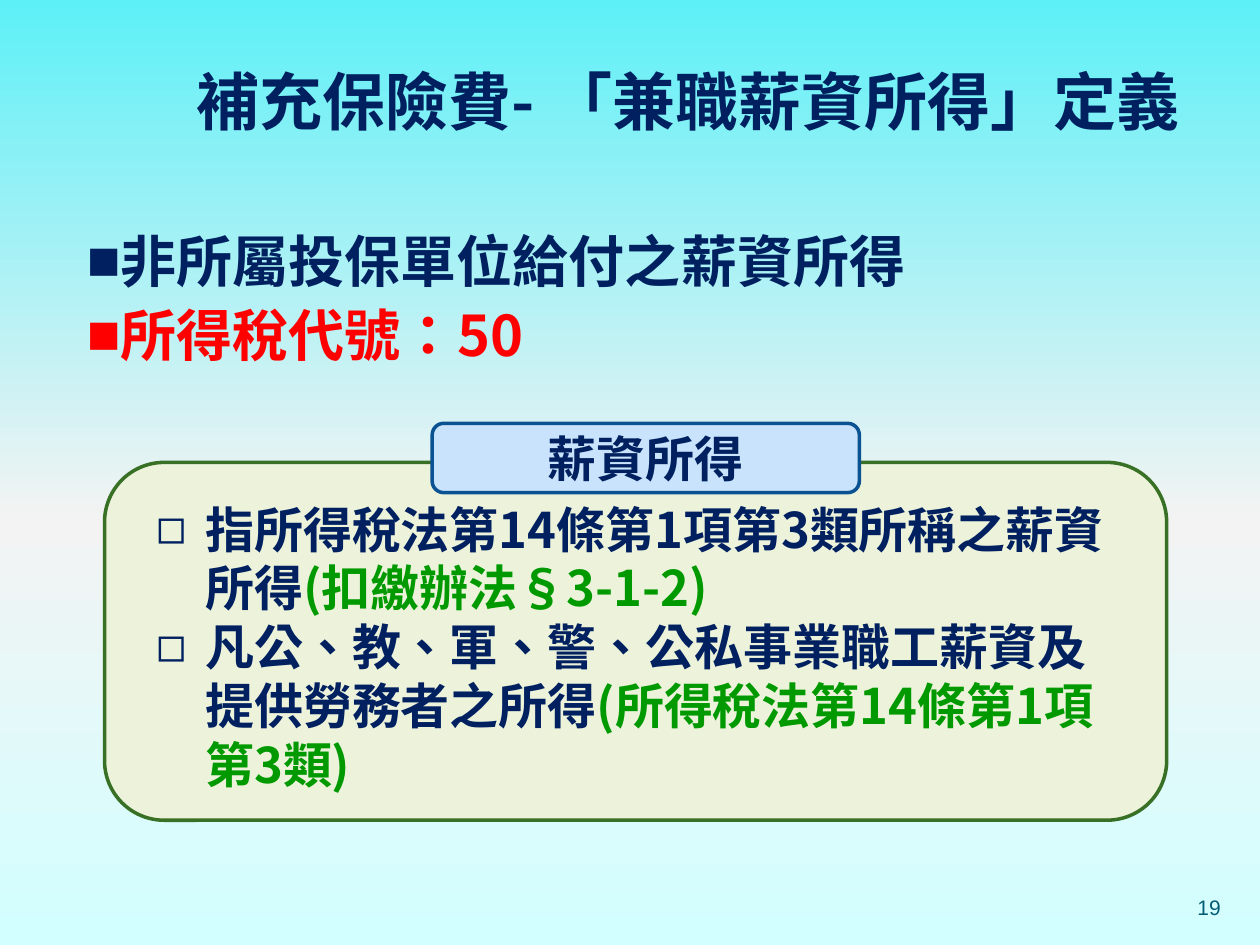
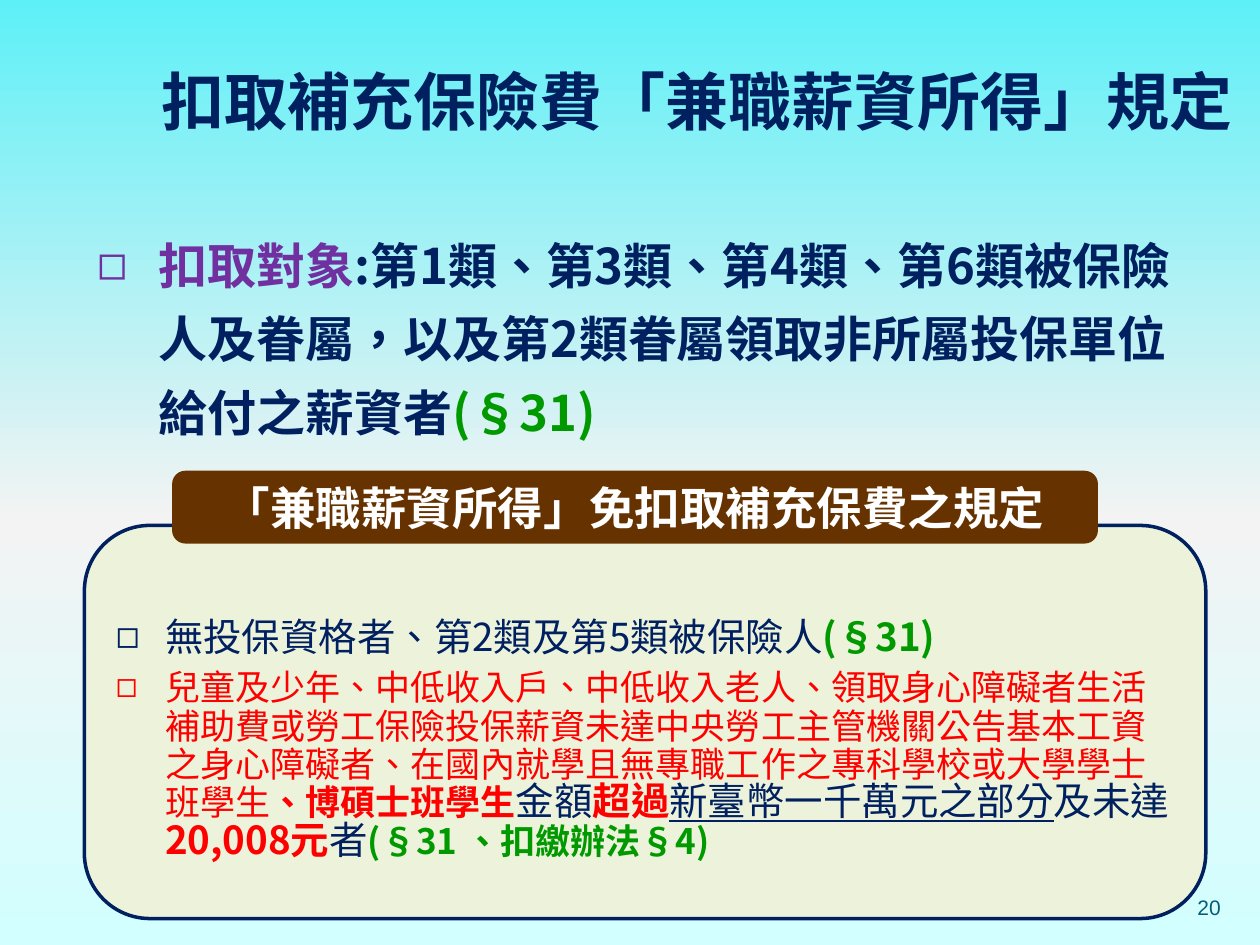
from copy import deepcopy
from dataclasses import dataclass
from typing import Optional

from lxml import etree
from pptx import Presentation
from pptx import util as u
from pptx.dml.color import RGBColor
from pptx.enum import shapes as sh, text as tx
from pptx.oxml import ns


# Theme: colours, faces and type sizes
@dataclass(frozen=True)
class Theme:
    navy: str = "002060"
    red: str = "FF0000"
    green: str = "009900"
    purple: str = "7030A0"
    white: str = "FFFFFF"
    teal: str = "045D75"
    cream: str = "EDF3DB"
    moss: str = "387026"
    sky: str = "C8E3FB"
    blue: str = "0B5292"
    brown: str = "663300"
    back: tuple = ((0, "5EF0F7"), (0.55, "F3F3F3"), (1, "D2FFFF"))
    face: str = "Noto Sans CJK SC"
    plain: str = "Arial"
    head: int = 36
    large: int = 32
    body: int = 28
    label: int = 26
    note: int = 22
    small: int = 20
    page: int = 12


T = Theme()
LEFT, MID, RIGHT = tx.PP_ALIGN.LEFT, tx.PP_ALIGN.CENTER, tx.PP_ALIGN.RIGHT
TOP, CENTRE, LOW = (tx.MSO_ANCHOR.TOP, tx.MSO_ANCHOR.MIDDLE,
                    tx.MSO_ANCHOR.BOTTOM)


@dataclass(frozen=True)
class Box:
    left: float
    top: float
    width: float
    height: float

    def place(self) -> tuple:
        return tuple(u.Inches(n) for n in
                     (self.left, self.top, self.width, self.height))


@dataclass(frozen=True)
class Run:
    text: str
    color: str = T.navy
    size: int = T.body
    bold: bool = True
    under: bool = False
    face: str = T.face


@dataclass(frozen=True)
class Para:
    runs: tuple
    align: tx.PP_ALIGN = LEFT
    mark: Optional[str] = None
    hang: float = 0
    pitch: Optional[float] = None
    after: float = 0


@dataclass(frozen=True)
class Panel:
    box: Box
    fill: str
    line: str
    paras: tuple = ()
    anchor: tx.MSO_ANCHOR = CENTRE
    inset: float = 0.05


@dataclass(frozen=True)
class Page:
    number: int
    title: str
    head: Box
    body: Box
    points: tuple
    panels: tuple
    note: Optional[Box] = None
    lines: tuple = ()


# Text
def add_run(para, text: str, *, color: str, size: int, bold: bool,
            under: bool, face: str) -> None:
    run = para.add_run()
    run.text = text
    font = run.font
    font.size, font.bold, font.name = u.Pt(size), bold, face
    font.color.rgb = RGBColor.from_string(color)
    if under:
        font.underline = True
    props = run._r.get_or_add_rPr()
    props.set("lang", "zh-TW")
    etree.SubElement(props, ns.qn("a:ea"), typeface=face)


def set_mark(para, mark: Optional[str], hang: float) -> None:
    props = para._p.get_or_add_pPr()
    props.set("marL", str(u.Inches(hang)))
    props.set("indent", str(-u.Inches(hang)))
    if mark:
        etree.SubElement(props, ns.qn("a:buFont"), typeface=T.plain)
        etree.SubElement(props, ns.qn("a:buChar"), char=mark)
    else:
        etree.SubElement(props, ns.qn("a:buNone"))


def fill_text(shape, paras: tuple, anchor: tx.MSO_ANCHOR = TOP,
              side: float = 0.1, top: float = 0.05,
              base: float = 0.05) -> None:
    frame = shape.text_frame
    frame.word_wrap = True
    frame.auto_size = tx.MSO_AUTO_SIZE.NONE
    frame.vertical_anchor = anchor
    frame.margin_left = frame.margin_right = u.Inches(side)
    frame.margin_top, frame.margin_bottom = u.Inches(top), u.Inches(base)
    for i, item in enumerate(paras):
        para = frame.add_paragraph() if i else frame.paragraphs[0]
        set_mark(para, item.mark, item.hang)
        para.alignment = item.align
        para.space_before, para.space_after = u.Pt(0), u.Pt(item.after)
        para.line_spacing = u.Pt(item.pitch) if item.pitch else 1.0
        for run in item.runs:
            add_run(para, run.text, color=run.color, size=run.size,
                    bold=run.bold, under=run.under, face=run.face)


# Parts of a slide
def move(shape, box: Box) -> None:
    shape.left, shape.top, shape.width, shape.height = box.place()


def draw_panel(slide, panel: Panel) -> None:
    shape = slide.shapes.add_shape(sh.MSO_SHAPE.ROUNDED_RECTANGLE,
                                   *panel.box.place())
    shape.shadow.inherit = False
    shape.fill.solid()
    shape.fill.fore_color.rgb = RGBColor.from_string(panel.fill)
    shape.line.color.rgb = RGBColor.from_string(panel.line)
    shape.line.width = u.Pt(2)
    if panel.paras:
        fill_text(shape, panel.paras, panel.anchor, top=panel.inset)


def draw_page(deck, page: Page) -> None:
    slide = deck.slides.add_slide(deck.slide_layouts[1])
    title, body = slide.shapes.title, slide.placeholders[1]
    move(title, page.head)
    fill_text(title, (Para((Run(page.title, size=T.head),)),), CENTRE)
    move(body, page.body)
    fill_text(body, page.points)
    for panel in page.panels:
        draw_panel(slide, panel)
    if page.note:
        fill_text(slide.shapes.add_textbox(*page.note.place()), page.lines)
    foot = slide.shapes.add_textbox(*Box(8.86, 6.9, 0.83, 0.4).place())
    digit = Run(str(page.number), T.teal, T.page, bold=False, face=T.plain)
    fill_text(foot, (Para((digit,), RIGHT),), LOW, side=0, top=0, base=0)


def set_back(master) -> None:
    fill = master.background.fill
    fill.gradient()
    fill.gradient_angle = 270
    stops = master.element.find(".//" + ns.qn("a:gsLst"))
    stops.append(deepcopy(stops[-1]))
    for stop, (where, color) in zip(fill.gradient_stops, T.back):
        stop.position = where
        stop.color.rgb = RGBColor.from_string(color)


# Content
def label(text: str, color: str, size: int) -> tuple:
    return (Para((Run(text, color, size),), MID),)


def clause(*runs: Run) -> Para:
    return Para(runs, mark="◻", hang=0.39, pitch=33.7)


def square(text: str, color: str) -> Para:
    return Para((Run(text, color, T.large),), mark="■", pitch=42)


WAGE = Page(
    19, "補充保險費- 「兼職薪資所得」定義",
    Box(1.46, 0.36, 8.27, 0.87), Box(0.59, 1.7, 8.98, 1.28),
    (square("非所屬投保單位給付之薪資所得", T.navy),
     square("所得稅代號：50", T.red)),
    (Panel(Box(0.83, 3.67, 8.43, 2.84), T.cream, T.moss),
     Panel(Box(3.43, 3.36, 3.39, 0.55), T.sky, T.blue,
           label("薪資所得", T.navy, T.body))),
    Box(1.14, 3.91, 7.88, 2.45),
    (clause(Run("指所得稅法第14條第1項第3類所稱之薪資所得"),
            Run("(扣繳辦法§3-1-2)", T.green)),
     clause(Run("凡公、教、軍、警、公私事業職工薪資及提供勞務者之所得"),
            Run("(所得稅法第14條第1項第3類)", T.green))))

EXEMPT = (
    Para((Run("無投保資格者、第2類及第5類被保險人", size=T.note, bold=False),
          Run("(§31)", T.green, T.note)),
         mark="◻", hang=0.39, pitch=30, after=6),
    Para((Run("兒童及少年、中低收入戶、中低收入老人、領取身心障礙者生活"
              "補助費或勞工保險投保薪資未達中央勞工主管機關公告基本工資"
              "之身心障礙者、在國內就學且無專職工作之專科學校或大學學士"
              "班學生", T.red, T.small, bold=False),
          Run("、博碩士班學生", T.red, T.small),
          Run("金額", size=T.note, bold=False),
          Run("超過", T.red, T.note),
          Run("新臺幣一千萬元之部分", size=T.note, bold=False, under=True),
          Run("及未達", size=T.note, bold=False),
          Run("20,008元", T.red, T.note),
          Run("者", size=T.note, bold=False),
          Run("(§31 、扣繳辦法§4)", T.green, T.small)),
         mark="◻", hang=0.39, pitch=22))

RULES = Page(
    20, "扣取補充保險費「兼職薪資所得」規定",
    Box(1.18, 0.36, 8.82, 0.87), Box(0.67, 1.7, 8.74, 1.83),
    (Para((Run("扣取對象", T.purple),
           Run(":第1類、第3類、第4類、第6類被保險人及眷屬，"
               "以及第2類眷屬領取非所屬投保單位給付之薪資者"),
           Run("(§31)", T.green)), mark="◻", hang=0.49, pitch=42),),
    (Panel(Box(0.67, 4.17, 8.9, 3.12), T.cream, T.navy, EXEMPT, TOP, 0.49),
     Panel(Box(1.38, 3.75, 7.32, 0.55), T.brown, T.brown,
           label("「兼職薪資所得」免扣取補充保費之規定", T.white, T.label))))


def main() -> None:
    deck = Presentation()
    deck.slide_width, deck.slide_height = u.Inches(10), u.Inches(7.5)
    set_back(deck.slide_master)
    for page in (WAGE, RULES):
        draw_page(deck, page)
    deck.save("out.pptx")


if __name__ == "__main__":
    main()
